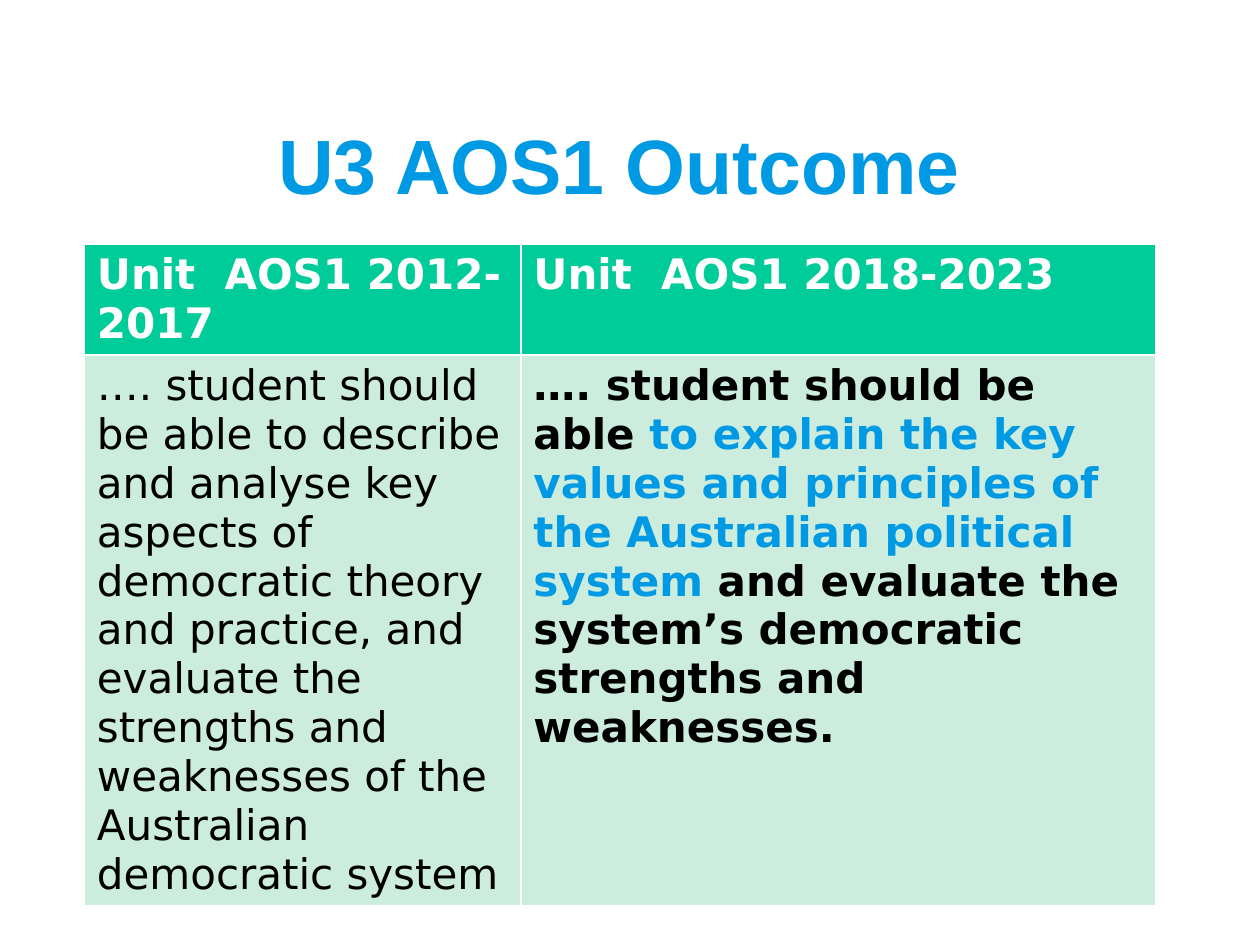
"""Build a slide comparing the U3 AOS1 outcome in two study designs."""
from pptx import Presentation
from pptx.dml.color import RGBColor
from pptx.enum.text import MSO_ANCHOR, PP_ALIGN
from pptx.util import Cm, Pt

CENTER = PP_ALIGN.CENTER
MIDDLE = MSO_ANCHOR.MIDDLE
COLORS = {
    "accent": "0099E3",
    "header": "00CC99",
    "body": "CCECDE",
    "light": "FFFFFF",
    "dark": "000000",
}


def style_run(run, font_name, size, color, bold):
    run.font.name = font_name
    run.font.size = Pt(size)
    run.font.bold = bold
    run.font.color.rgb = RGBColor.from_string(COLORS[color])


prs = Presentation()
prs.slide_width = Cm(25.4)
prs.slide_height = Cm(19.05)
slide = prs.slides.add_slide(prs.slide_layouts[5])

title = slide.shapes.title
title.left, title.top = Cm(1.9), Cm(1.7)
title.width, title.height = Cm(21.6), Cm(3.18)
title.text_frame.text = "U3 AOS1 Outcome "
title.text_frame.vertical_anchor = MIDDLE
heading = title.text_frame.paragraphs[0]
heading.alignment = CENTER
style_run(heading.runs[0], "Arial", 44, "accent", True)

rows = [
    ("header", [
        [("Unit  AOS1 2012-2017", "light", True)],
        [("Unit  AOS1 2018-2023", "light", True)],
    ]),
    ("body", [
        [("…. student should be able to describe and analyse key aspects of "
          "democratic theory and practice, and evaluate the strengths and "
          "weaknesses of the Australian democratic system", "dark", False)],
        [("…. student should be able ", "dark", True),
         ("to explain the key values and principles of the Australian "
          "political system", "accent", True),
         (" and evaluate the system’s democratic strengths and weaknesses.",
          "dark", True)],
    ]),
]

outcomes = slide.shapes.add_table(
    2, 2, Cm(1.7), Cm(4.93), Cm(21.6), Cm(6.63)).table
for column, width in zip(outcomes.columns, (8.8, 12.8)):
    column.width = Cm(width)

for row, (fill, cells) in zip(outcomes.rows, rows):
    row.height = Cm(1.04)
    for cell, parts in zip(row.cells, cells):
        cell.fill.solid()
        cell.fill.fore_color.rgb = RGBColor.from_string(COLORS[fill])
        paragraph = cell.text_frame.paragraphs[0]
        for text, color, bold in parts:
            run = paragraph.add_run()
            run.text = text
            style_run(run, "DejaVu Sans", 24, color, bold)

prs.save("out.pptx")
